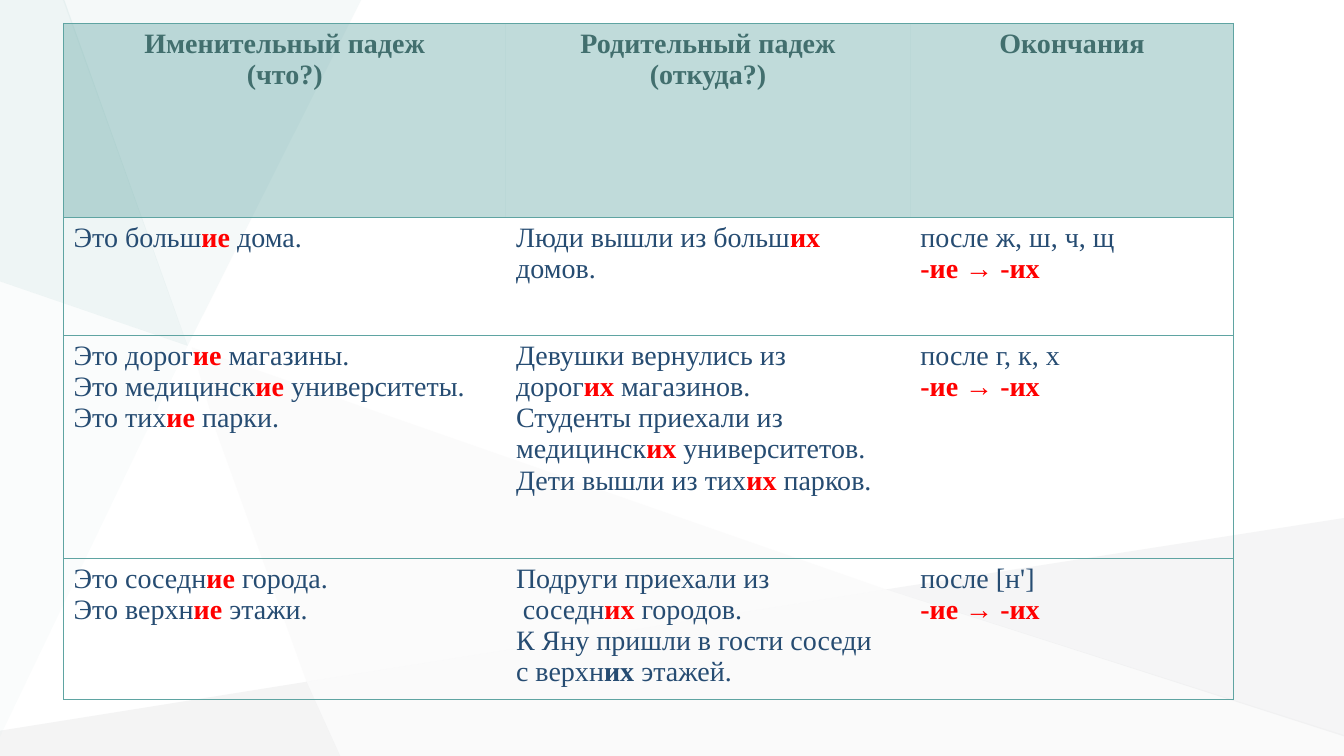
from dataclasses import dataclass

from lxml import etree
from pptx import Presentation
from pptx import util as u
from pptx.dml import color
from pptx.enum import text
from pptx.oxml import ns

COLORS = {
    "header_text": "426F6E",
    "header_fill": "63A6A4",
    "border": "5FA4A2",
    "body": "264C72",
    "ending": "FF0000",
    "pale_gray": "F3F2F2",
    "mid_gray": "B6B8BA",
    "gray": "C6C8CA",
    "pale_teal": "E0EDED",
    "teal": "C1DBDB",
}
FONT = "Times New Roman"
FONT_SIZE = 20
HEADER_OPACITY = 40
BORDER_WIDTH = 0.75
TABLE_LEFT, TABLE_TOP = 45.4, 16.6
COLUMN_WIDTHS = (316, 288.8, 231.1)
ROW_HEIGHTS = (139, 84.2, 159.1, 100.8)


@dataclass(frozen=True)
class Facet:
    points: tuple[tuple[float, float], ...]
    fill: str
    opacity: int


FACETS = (
    Facet(((137, 248), (154, 307), (197, 426), (219, 487), (633, 421)), "pale_gray", 26),
    Facet(((219, 487), (0, 522), (0, 540), (243, 540)), "mid_gray", 15),
    Facet(((258, 0), (45, 0), (134, 247)), "pale_teal", 31),
    Facet(((960, 370), (633, 421), (960, 526)), "gray", 17),
    Facet(((633, 421), (219, 487), (243, 540), (960, 540), (960, 525)), "mid_gray", 6),
    Facet(((46, 0), (0, 0), (0, 201), (134, 247)), "teal", 27),
    Facet(((0, 201), (0, 526), (134, 247)), "teal", 8),
)

# Markup: *red bold ending*, _bold ending_
ROWS = (
    (
        ("Именительный падеж", "(что?)"),
        ("Родительный падеж", "(откуда?)"),
        ("Окончания",),
    ),
    (
        ("Это больш*ие *дома.",),
        ("Люди вышли из больш*их*", "домов."),
        ("после ж, ш, ч, щ", "*-ие → -их*"),
    ),
    (
        ("Это дорог*ие *магазины.", "Это медицинск*ие *университеты.", "Это тих*ие *парки."),
        (
            "Девушки вернулись из",
            "дорог*их *магазинов.",
            "Студенты приехали из",
            "медицинск*их *университетов.",
            "Дети вышли из тих*их* парков.",
        ),
        ("после г, к, х", "*-ие → -их*"),
    ),
    (
        ("Это соседн*ие *города.", "Это верхн*ие* этажи."),
        (
            "Подруги приехали из",
            " соседн*их *городов.",
            "К Яну пришли в гости соседи",
            "с верхн_их _этажей.",
        ),
        ("после [н']", "*-ие → -их*"),
    ),
)


def rgb(name: str) -> color.RGBColor:
    return color.RGBColor.from_string(COLORS[name])


def fill_translucent(fill, properties, name: str, opacity: int) -> None:
    fill.solid()
    fill.fore_color.rgb = rgb(name)
    clr = properties.find(ns.qn("a:solidFill"))[0]
    etree.SubElement(clr, ns.qn("a:alpha"), val=str(opacity * 1000))


def draw_facet(s, facet: Facet) -> None:
    points = [(u.Pt(x), u.Pt(y)) for x, y in facet.points]
    builder = s.shapes.build_freeform(*points[0])
    builder.add_line_segments(points[1:], close=True)
    sp = builder.convert_to_shape()
    sp.shadow.inherit = False
    sp.line.fill.background()
    fill_translucent(sp.fill, sp._element.spPr, facet.fill, facet.opacity)


def set_borders(tc_pr, first: bool, last: bool) -> None:
    visible = {"lnL": first, "lnR": last, "lnT": True, "lnB": True}
    for side, shown in visible.items():
        ln = etree.SubElement(tc_pr, ns.qn(f"a:{side}"), w=str(u.Pt(BORDER_WIDTH)))
        if shown:
            solid = etree.SubElement(ln, ns.qn("a:solidFill"))
            etree.SubElement(solid, ns.qn("a:srgbClr"), val=COLORS["border"])
        else:
            etree.SubElement(ln, ns.qn("a:noFill"))


def add_run(p, words: str, red: bool, bold: bool) -> None:
    r = p.add_run()
    r.text = words
    r.font.bold = bold
    r.font.color.rgb = rgb("ending" if red else "body")


def write_line(p, line: str, header: bool) -> None:
    p.font.name = FONT
    p.font.size = u.Pt(FONT_SIZE)
    if header:
        p.alignment = text.PP_ALIGN.CENTER
        p.font.bold = True
        p.font.color.rgb = rgb("header_text")
        p.add_run().text = line
        return
    for i, chunk in enumerate(line.split("*")):
        for j, words in enumerate(chunk.split("_")):
            if words:
                add_run(p, words, red=i % 2 == 1, bold=(i + j) % 2 == 1)


def fill_cell(cell, lines: tuple[str, ...], header: bool, first: bool, last: bool) -> None:
    tc_pr = cell._tc.get_or_add_tcPr()
    set_borders(tc_pr, first, last)
    if header:
        fill_translucent(cell.fill, tc_pr, "header_fill", HEADER_OPACITY)
    else:
        cell.fill.background()
    tf = cell.text_frame
    for i, line in enumerate(lines):
        p = tf.add_paragraph() if i else tf.paragraphs[0]
        write_line(p, line, header)


def draw_table(s) -> None:
    frame = s.shapes.add_table(
        len(ROW_HEIGHTS), len(COLUMN_WIDTHS), u.Pt(TABLE_LEFT), u.Pt(TABLE_TOP),
        u.Pt(sum(COLUMN_WIDTHS)), u.Pt(sum(ROW_HEIGHTS)),
    )
    table = frame.table
    table.first_row = False
    table.horz_banding = False
    for column, width in zip(table.columns, COLUMN_WIDTHS):
        column.width = u.Pt(width)
    for row, height in zip(table.rows, ROW_HEIGHTS):
        row.height = u.Pt(height)
    last_column = len(COLUMN_WIDTHS) - 1
    for i, row in enumerate(ROWS):
        for j, lines in enumerate(row):
            fill_cell(table.cell(i, j), lines, i == 0, j == 0, j == last_column)


def main() -> None:
    prs = Presentation()
    prs.slide_width, prs.slide_height = u.Pt(960), u.Pt(540)
    s = prs.slides.add_slide(prs.slide_layouts[6])
    for facet in FACETS:
        draw_facet(s, facet)
    draw_table(s)
    prs.save("out.pptx")


if __name__ == "__main__":
    main()
